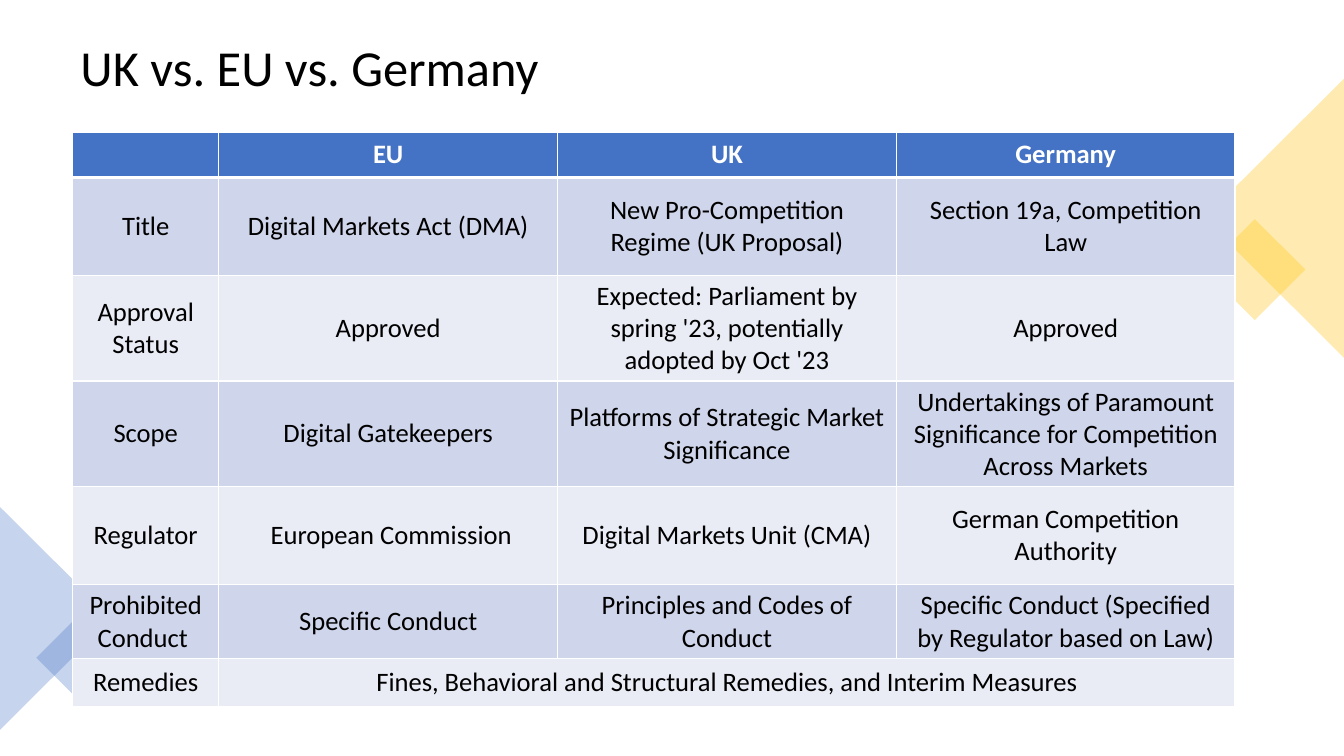
import pptx
import pptx.util
import pptx.dml.color
import pptx.enum.shapes
import pptx.enum.text
import pptx.oxml.ns
import lxml.etree

Inches = pptx.util.Inches
Pt = pptx.util.Pt
qn = pptx.oxml.ns.qn
Shape = pptx.enum.shapes.MSO_SHAPE
Align = pptx.enum.text.PP_ALIGN
Anchor = pptx.enum.text.MSO_ANCHOR

FONT = "Calibri"
COLORS = {
    "text": "000000",
    "white": "FFFFFF",
    "blue": "4472C4",
    "gold": "FFC000",
    "odd": "CFD5EA",
    "even": "E9EBF5",
}
COLS = [1.45, 3.36, 3.36, 3.36]
HEIGHTS = [0.45, 0.97, 0.71, 0.71, 0.97, 0.68, 0.48]
ROWS = [
    ["", "EU", "UK", "Germany"],
    ["Title", "Digital Markets Act (DMA)",
     "New Pro-Competition Regime (UK Proposal)",
     "Section 19a, Competition Law"],
    ["Approval Status", "Approved",
     "Expected: Parliament by spring '23, potentially adopted by Oct '23",
     "Approved"],
    ["Scope", "Digital Gatekeepers",
     "Platforms of Strategic Market Significance",
     "Undertakings of Paramount Significance for Competition Across Markets"],
    ["Regulator", " European Commission", "Digital Markets Unit (CMA)",
     "German Competition Authority"],
    ["Prohibited Conduct ", "Specific Conduct",
     "Principles and Codes of Conduct",
     "Specific Conduct (Specified by Regulator based on Law)"],
    ["Remedies",
     "Fines, Behavioral and Structural Remedies, and Interim Measures"],
]


def rgb(name):
    return pptx.dml.color.RGBColor.from_string(COLORS[name])


def style(par, size, color, bold=False):
    par.font.name = FONT
    par.font.size = Pt(size)
    par.font.bold = bold
    par.font.color.rgb = rgb(color)


def add_title(slide, left, top, width, height):
    box = slide.shapes.add_textbox(
        Inches(left), Inches(top), Inches(width), Inches(height))
    frame = box.text_frame
    frame.word_wrap = True
    frame.vertical_anchor = Anchor.MIDDLE
    par = frame.paragraphs[0]
    par.text = "UK vs. EU vs. Germany"
    par.line_spacing = 0.9
    style(par, 36, "text")


def add_accent(slide, kind, left, top, width, height, turn, color):
    part = slide.shapes.add_shape(
        kind, Inches(left), Inches(top), Inches(width), Inches(height))
    part.rotation = turn
    part.shadow.inherit = False
    part.line.fill.background()
    part.fill.solid()
    part.fill.fore_color.rgb = rgb(color)
    # Make the fill 30% opaque
    tint = part.fill._xPr.find(qn("a:solidFill"))[0]
    lxml.etree.SubElement(tint, qn("a:alpha"), val="30000")


def add_edges(cell, base):
    props = cell._tc.get_or_add_tcPr()
    for spot, (side, width) in enumerate(
            [("lnL", 1), ("lnR", 1), ("lnT", 1), ("lnB", base)]):
        line = lxml.etree.Element(qn("a:" + side), w=str(Pt(width)))
        fill = lxml.etree.SubElement(line, qn("a:solidFill"))
        lxml.etree.SubElement(fill, qn("a:srgbClr"), val=COLORS["white"])
        props.insert(spot, line)


def add_grid(slide, left, top):
    grid = slide.shapes.add_table(
        len(ROWS), len(COLS), Inches(left), Inches(top),
        Inches(sum(COLS)), Inches(sum(HEIGHTS))).table
    for col, width in zip(grid.columns, COLS):
        col.width = Inches(width)
    for row, height in zip(grid.rows, HEIGHTS):
        row.height = Inches(height)

    # The remedies are shared by all three regimes
    last = len(ROWS) - 1
    grid.cell(last, 1).merge(grid.cell(last, 3))

    for r, row in enumerate(grid.rows):
        head = r == 0
        band = "blue" if head else ("odd" if r % 2 else "even")
        for c, cell in enumerate(row.cells):
            cell.fill.solid()
            cell.fill.fore_color.rgb = rgb(band)
            cell.vertical_anchor = Anchor.MIDDLE
            add_edges(cell, 3 if head else 1)
            par = cell.text_frame.paragraphs[0]
            if c < len(ROWS[r]):
                par.text = ROWS[r][c]
            par.alignment = Align.CENTER
            style(par, 19, "white" if head else "text", head)


def main():
    deck = pptx.Presentation()
    deck.slide_width = Inches(13.33)
    deck.slide_height = Inches(7.5)
    slide = deck.slides.add_slide(deck.slide_layouts[6])

    # Gold accents on the right, blue ones on the left
    add_accent(slide, Shape.RECTANGLE, 12.09, 2.32, 0.71, 0.71, 45, "gold")
    add_accent(slide, Shape.ISOSCELES_TRIANGLE,
               11.25, 1.47, 2.77, 1.39, 270, "gold")
    add_accent(slide, Shape.ISOSCELES_TRIANGLE,
               -0.55, 5.58, 2.21, 1.11, 90, "blue")
    add_accent(slide, Shape.RECTANGLE, 0.47, 6.26, 0.53, 0.53, 45, "blue")

    # Heading and comparison table
    add_title(slide, 0.7, 0.08, 11.93, 1.24)
    add_grid(slide, 0.72, 1.31)
    deck.save("out.pptx")


if __name__ == "__main__":
    main()
